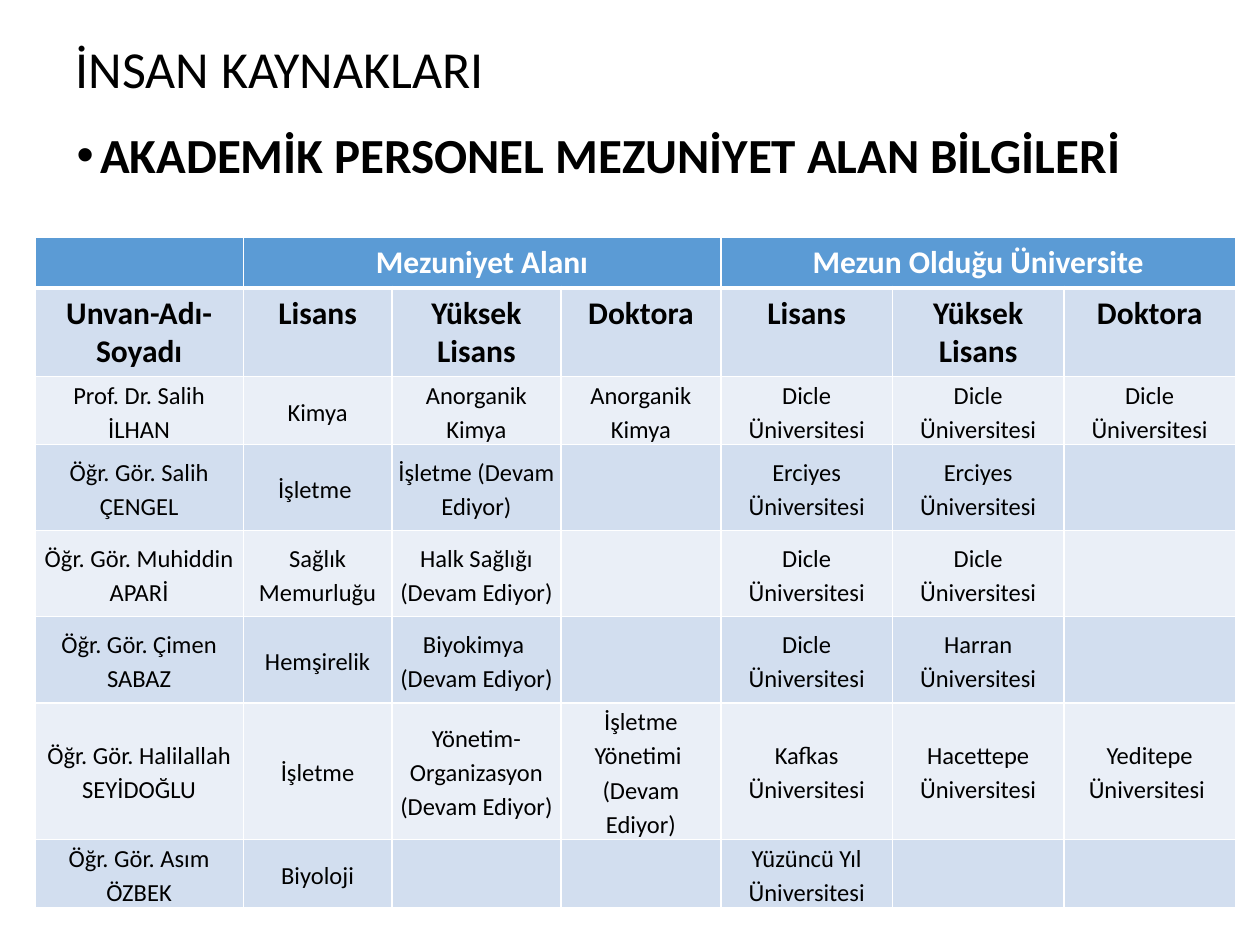
import pptx
import pptx.dml.color
import pptx.enum.text
import pptx.oxml
import pptx.oxml.ns
import pptx.util

Pt = pptx.util.Pt
ALIGN = pptx.enum.text.PP_ALIGN
ANCHOR = pptx.enum.text.MSO_ANCHOR

COLUMNS = [119, 85, 96.5, 91.5, 98, 98, 98]
ROW_HEIGHTS = [29, 50.5, 39, 49.2, 49.2, 49.2, 78, 39]
BLUE, BAND, LIGHT = "5B9BD5", "D2DEEF", "EAEFF7"
HEADER = ["", "Mezuniyet Alanı", "", "", "Mezun Olduğu Üniversite", "", ""]
DEGREES = ["Lisans", "Yüksek Lisans", "Doktora"]
STAFF = [
    ["Prof. Dr. Salih İLHAN", "Kimya", "Anorganik Kimya", "Anorganik Kimya",
     "Dicle Üniversitesi", "Dicle Üniversitesi", "Dicle Üniversitesi"],
    ["Öğr. Gör. Salih ÇENGEL", "İşletme ", "İşletme (Devam Ediyor)", "",
     "Erciyes Üniversitesi", "Erciyes Üniversitesi", ""],
    ["Öğr. Gör. Muhiddin APARİ", "Sağlık Memurluğu", "Halk Sağlığı (Devam Ediyor)", "",
     "Dicle Üniversitesi", "Dicle Üniversitesi", ""],
    ["Öğr. Gör. Çimen SABAZ", "Hemşirelik", "Biyokimya \n(Devam Ediyor)", "",
     "Dicle Üniversitesi", "Harran Üniversitesi", ""],
    ["Öğr. Gör. Halilallah SEYİDOĞLU", "İşletme", "Yönetim-Organizasyon (Devam Ediyor)",
     "İşletme Yönetimi \n(Devam Ediyor)", "Kafkas Üniversitesi",
     "Hacettepe Üniversitesi", "Yeditepe Üniversitesi "],
    ["Öğr. Gör. Asım ÖZBEK", "Biyoloji", "", "", "Yüzüncü Yıl Üniversitesi", "", ""],
]


def rgb(value):
    """Turn a hex string into a colour."""
    return pptx.dml.color.RGBColor.from_string(value)


def apply(obj, values):
    """Set each attribute in a dict on an object."""
    for name, value in values.items():
        setattr(obj, name, value)


def write(tf, text, size, bold=False, color="000000", **paragraph):
    """Write formatted text, one paragraph per line."""
    tf.text = text
    for p in tf.paragraphs:
        apply(p, paragraph)
        for r in p.runs:
            apply(r.font, {"name": "Calibri", "size": Pt(size), "bold": bold})
            r.font.color.rgb = rgb(color)


def add_title(s, text):
    """Place and fill the title placeholder."""
    sp = s.shapes.title
    apply(sp, {"left": Pt(36), "top": Pt(21.6), "width": Pt(648), "height": Pt(39)})
    tf = sp.text_frame
    apply(tf, {"auto_size": pptx.enum.text.MSO_AUTO_SIZE.NONE,
               "vertical_anchor": ANCHOR.MIDDLE, "word_wrap": True})
    write(tf, text, 29.7, alignment=ALIGN.LEFT, line_spacing=0.9)


def add_bullet(s, text):
    """Add a bulleted heading."""
    sp = s.shapes.add_textbox(Pt(36.7), Pt(71.3), Pt(648), Pt(394))
    sp.text_frame.word_wrap = True
    write(sp.text_frame, text, 28, True, line_spacing=0.9, space_before=Pt(7.5))
    pPr = sp.text_frame.paragraphs[0]._p.get_or_add_pPr()
    pPr.set("marL", str(Pt(13.5)))
    pPr.set("indent", str(-Pt(13.5)))
    ns = pptx.oxml.ns.nsdecls("a")
    pPr.append(pptx.oxml.parse_xml(f'<a:buFont {ns} typeface="Arial"/>'))
    pPr.append(pptx.oxml.parse_xml(f'<a:buChar {ns} char="•"/>'))


def add_borders(cell, row):
    """Draw white cell borders, thick below the header row."""
    widths = {"L": 1, "R": 1, "T": 3 if row == 1 else 1, "B": 3 if row == 0 else 1}
    for side, width in widths.items():
        cell._tc.get_or_add_tcPr().append(pptx.oxml.parse_xml(
            f'<a:ln{side} {pptx.oxml.ns.nsdecls("a")} w="{Pt(width)}"><a:solidFill>'
            f'<a:srgbClr val="FFFFFF"/></a:solidFill></a:ln{side}>'))


def format_cell(cell, row, text):
    """Fill, border and write one table cell."""
    add_borders(cell, row)
    cell.fill.solid()
    cell.fill.fore_color.rgb = rgb(BLUE if row == 0 else BAND if row % 2 else LIGHT)
    if row > 1 and text:
        apply(cell, {"margin_left": Pt(3.6), "margin_right": Pt(3.6), "margin_top": 0,
                     "margin_bottom": 0, "vertical_anchor": ANCHOR.MIDDLE})
        write(cell.text_frame, text, 14, alignment=ALIGN.CENTER, line_spacing=1.15)
    elif text:
        write(cell.text_frame, text, 18, True, "000000" if row else "FFFFFF",
              alignment=ALIGN.CENTER)


def add_staff_table(s):
    """Add the table of staff degrees."""
    rows = [HEADER, ["Unvan-Adı- Soyadı"] + DEGREES * 2] + STAFF
    table = s.shapes.add_table(len(rows), len(COLUMNS), Pt(20), Pt(135.6),
                               Pt(sum(COLUMNS)), Pt(sum(ROW_HEIGHTS))).table
    for column, width in zip(table.columns, COLUMNS):
        column.width = Pt(width)
    for row, height in zip(table.rows, ROW_HEIGHTS):
        row.height = Pt(height)
    for first in (1, 4):
        table.cell(0, first).merge(table.cell(0, first + 2))
    for i, texts in enumerate(rows):
        for j, text in enumerate(texts):
            format_cell(table.cell(i, j), i, text)


def main():
    """Build and save the slide."""
    prs = pptx.Presentation()
    apply(prs, {"slide_width": Pt(720), "slide_height": Pt(540)})
    s = prs.slides.add_slide(prs.slide_layouts[5])
    add_title(s, "İNSAN KAYNAKLARI")
    add_bullet(s, "AKADEMİK PERSONEL MEZUNİYET ALAN BİLGİLERİ")
    add_staff_table(s)
    prs.save("out.pptx")


if __name__ == "__main__":
    main()
